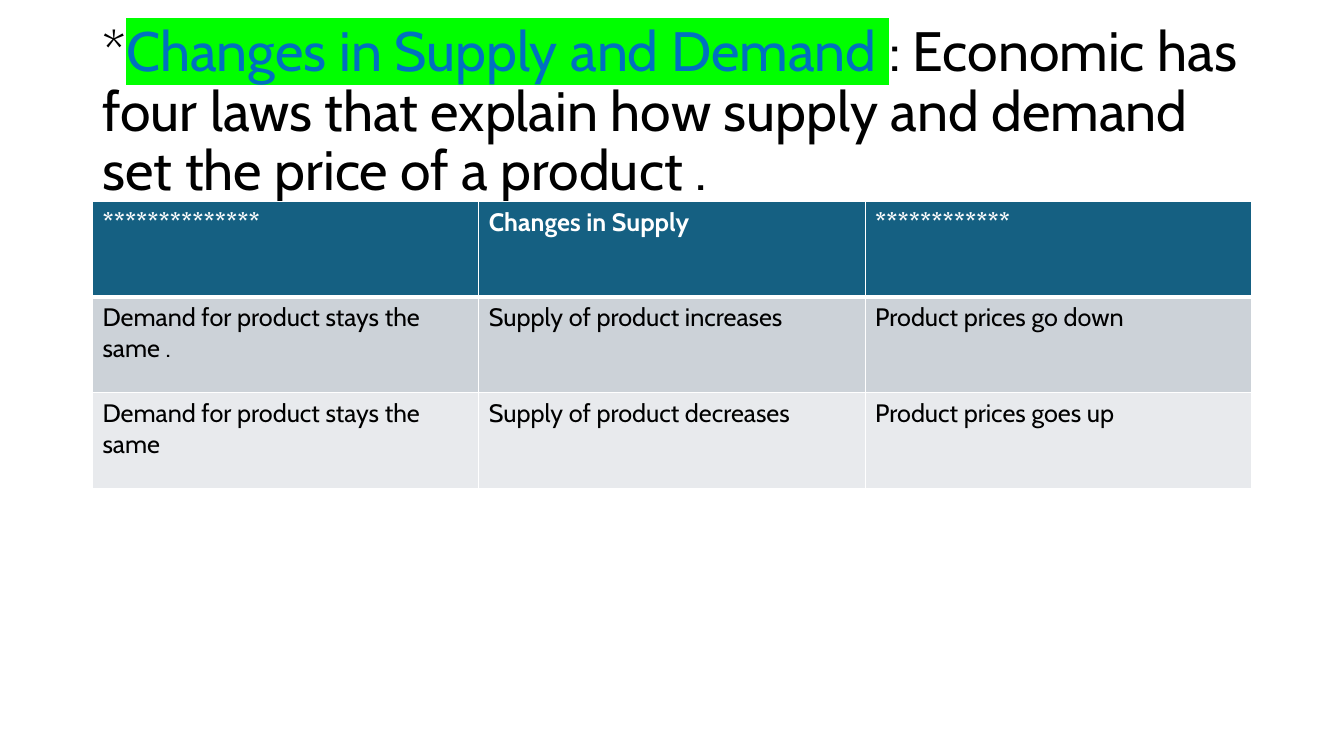
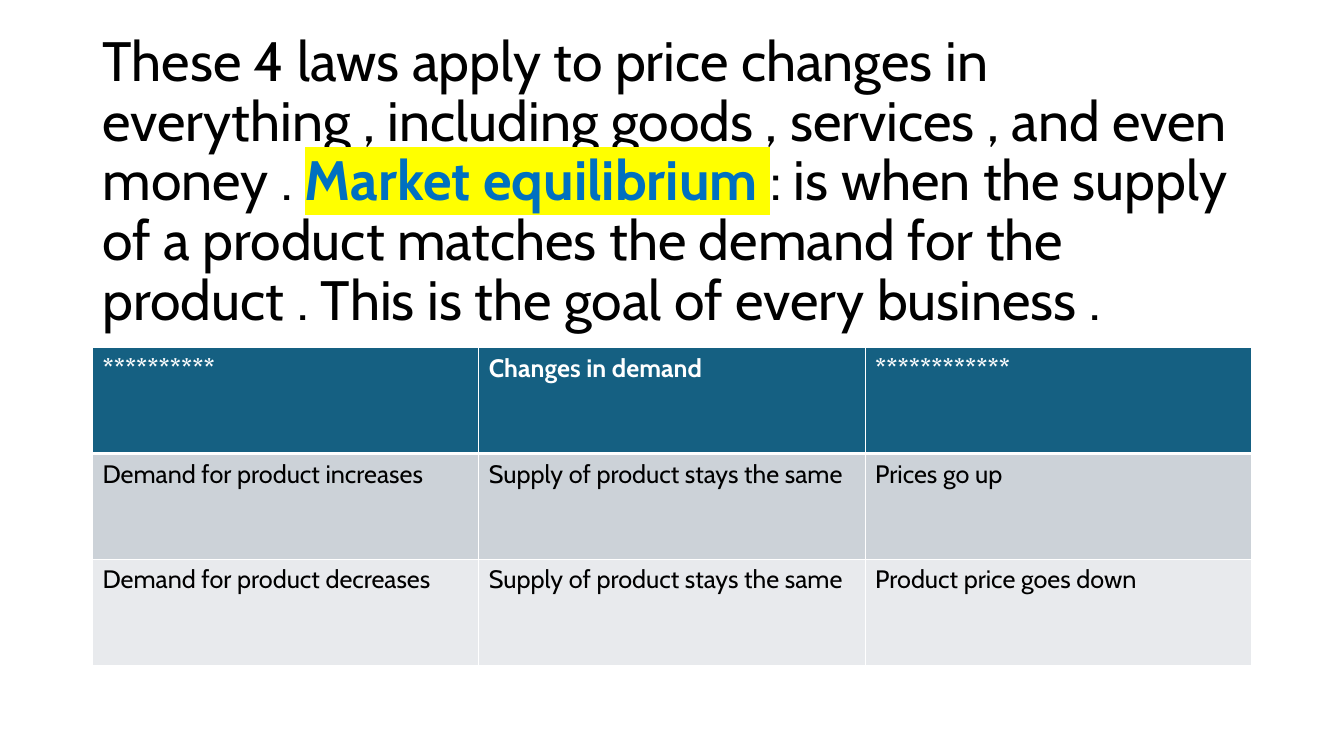
from lxml import etree
from pptx import Presentation
from pptx import util as u
from pptx.dml.color import RGBColor
from pptx.enum import text
from pptx.oxml import ns

FONT = "Cabin"
BLACK = RGBColor(0x00, 0x00, 0x00)
WHITE = RGBColor(0xFF, 0xFF, 0xFF)
TERM_BLUE = RGBColor(0x00, 0x70, 0xC0)
GREEN = RGBColor(0x00, 0xFF, 0x00)
YELLOW = RGBColor(0xFF, 0xFF, 0x00)
HEADER_TEAL = RGBColor(0x15, 0x60, 0x82)
BANDS = (RGBColor(0xCC, 0xD2, 0xD8), RGBColor(0xE8, 0xEA, 0xED))

LEFT, WIDTH = u.Cm(2.33), u.Cm(29.21)
THIN, THICK = u.Pt(1), u.Pt(3)


def style_run(run, size, color, bold=False):
    font = run.font
    font.name, font.size, font.bold = FONT, u.Pt(size), bold
    font.color.rgb = color


def add_solid_color(parent, color):
    etree.SubElement(parent, ns.qn("a:srgbClr"), val=str(color))


def highlight_run(run, color):
    # The highlight belongs directly after the text fill
    fill = run.font.fill._xPr.find(ns.qn("a:solidFill"))
    highlight = etree.Element(ns.qn("a:highlight"))
    add_solid_color(highlight, color)
    fill.addnext(highlight)


def set_borders(cell, top, bottom):
    widths = {"lnL": THIN, "lnR": THIN, "lnT": top, "lnB": bottom}
    properties = cell._tc.get_or_add_tcPr()
    for position, (side, width) in enumerate(widths.items()):
        line = etree.Element(ns.qn(f"a:{side}"), w=str(int(width)))
        add_solid_color(etree.SubElement(line, ns.qn("a:solidFill")), WHITE)
        properties.insert(position, line)


def place_title(slide, top, height, lead, term, rest, marker, term_bold):
    title = slide.shapes.title
    title.left, title.top, title.width, title.height = LEFT, top, WIDTH, height
    frame = title.text_frame
    frame.word_wrap = True
    frame.auto_size = text.MSO_AUTO_SIZE.NONE
    frame.vertical_anchor = text.MSO_ANCHOR.MIDDLE
    frame.text = lead
    paragraph = frame.paragraphs[0]
    paragraph.alignment = text.PP_ALIGN.LEFT
    paragraph.line_spacing = 0.9
    for wording in (term, rest):
        paragraph.add_run().text = wording
    lead_run, term_run, rest_run = paragraph.runs
    style_run(lead_run, 39.6, BLACK)
    style_run(term_run, 39.6, TERM_BLUE, term_bold)
    style_run(rest_run, 39.6, BLACK)
    highlight_run(term_run, marker)


def place_law_table(slide, top, row_height, rows):
    table = slide.shapes.add_table(
        len(rows), len(rows[0]), LEFT, top, WIDTH, row_height * len(rows)).table
    for r, row in enumerate(rows):
        header = r == 0
        for c, wording in enumerate(row):
            cell = table.cell(r, c)
            cell.text_frame.text = wording
            style_run(cell.text_frame.paragraphs[0].runs[0], 18,
                      WHITE if header else BLACK, header)
            cell.fill.solid()
            cell.fill.fore_color.rgb = HEADER_TEAL if header else BANDS[(r - 1) % 2]
            # The heavy rule runs between the header and the first law
            set_borders(cell, THICK if r == 1 else THIN, THICK if header else THIN)


def add_law_slide(prs, title, table):
    slide = prs.slides.add_slide(prs.slide_layouts[5])
    place_title(slide, **title)
    place_law_table(slide, **table)


def main():
    prs = Presentation()
    prs.slide_width, prs.slide_height = u.Cm(33.87), u.Cm(19.05)

    # Changes in supply
    add_law_slide(
        prs,
        dict(top=u.Cm(1.01), height=u.Cm(3.68),
             lead="*",
             term="Changes in Supply and Demand ",
             rest=": Economic has four laws that explain how supply and demand "
                  "set the price of a product .",
             marker=GREEN, term_bold=False),
        dict(top=u.Cm(5.08), row_height=u.Cm(2.41), rows=[
            ("**************", "Changes in Supply", "************"),
            ("Demand for product stays the same .", "Supply of product increases",
             "Product prices go down"),
            ("Demand for product stays the same", "Supply of product decreases",
             "Product prices goes up"),
        ]))

    # Changes in demand
    add_law_slide(
        prs,
        dict(top=u.Cm(4.52), height=u.Cm(0.18),
             lead="These 4 laws apply to price changes in everything , including "
                  "goods , services , and even money . ",
             term="Market equilibrium ",
             rest=": is when the supply of a product matches the demand for the "
                  "product . This is the goal of every business .",
             marker=YELLOW, term_bold=True),
        dict(top=u.Cm(8.76), row_height=u.Cm(2.67), rows=[
            ("**********", "Changes in demand", "************"),
            ("Demand for product increases", "Supply of product stays the same",
             "Prices go up"),
            ("Demand for product decreases", "Supply of product stays the same",
             "Product price goes down"),
        ]))

    prs.save("out.pptx")


if __name__ == "__main__":
    main()
